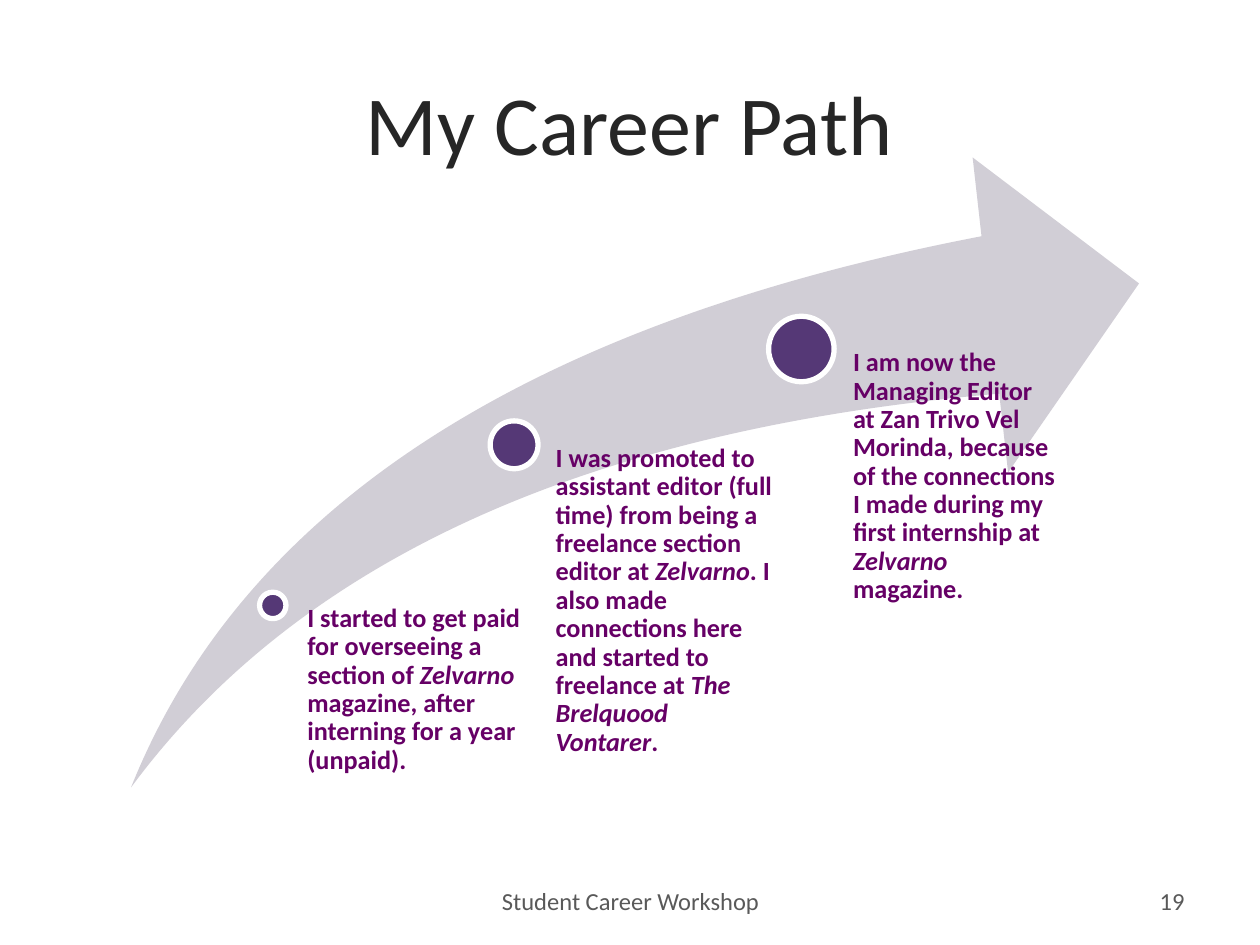
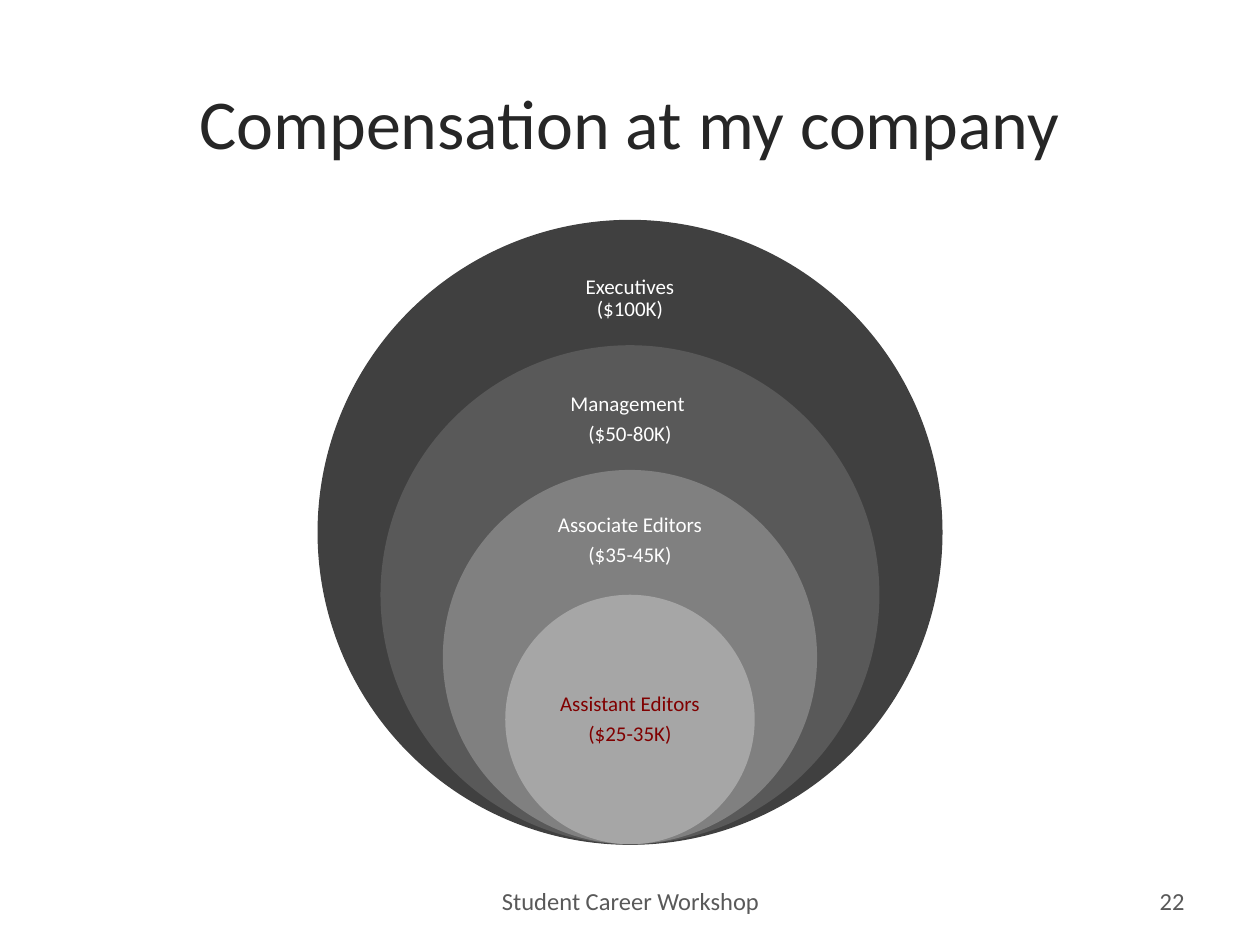
import pptx
import pptx.util
import pptx.dml.color
import pptx.enum.shapes
import pptx.enum.text

Shape = pptx.enum.shapes.MSO_SHAPE
Align = pptx.enum.text.PP_ALIGN
Anchor = pptx.enum.text.MSO_ANCHOR

PX = 9144
FONT = "Calibri"
COLORS = {
    "paper": "FFFFFF", "title": "262626", "foot": "595959",
    "swoosh": "D1CED6", "dot": "553876", "story": "660066",
    "low": "800000", "ring1": "404040", "ring2": "595959",
    "ring3": "808080", "ring4": "A6A6A6",
}
FOOTER = "Student Career Workshop"

PATH = {"title": "My Career Path", "size": 48, "page": "19"}
STEPS = [
    {"dot": (206, 470, 21), "box": (233, 480, 186), "inset": 11,
     "text": "I started to get paid for overseeing a section of *Zelvarno* "
             "magazine, after interning for a year (unpaid)."},
    {"dot": (389, 334, 38), "box": (421, 353, 192), "inset": 20,
     "text": "I was promoted to assistant editor (full time) from being a "
             "freelance section editor at *Zelvarno*. I also made connections "
             "here and started to freelance at* The Brelquood Vontarer*."},
    {"dot": (610, 251, 52), "box": (649, 277, 192), "inset": 28,
     "text": "I am now the Managing Editor at Zan Trivo Vel Morinda, because of "
             "the connections I made during my first internship at *Zelvarno* "
             "magazine."},
]
STEP_END = 625

PAY = {"title": "Compensation at my company", "size": 40, "page": "22"}
RINGS = [
    (["Executives ($100K)"], "ring1", "paper", 209, 56),
    (["Management ", "($50-80K)"], "ring2", "paper", 307, 53),
    (["Associate Editors", "($35-45K)"], "ring3", "paper", 405, 48),
    (["Assistant Editors", "($25-35K)"], "ring4", "low", 531, 80),
]
RING_UNIT, RING_END, MID, LABEL = 99, 670, 500, 120


def px(*nums):
    return [pptx.util.Emu(round(n * PX)) for n in nums]


def rgb(name):
    return pptx.dml.color.RGBColor.from_string(COLORS[name])


def write(slide, lines, box, size, color, align=Align.LEFT, anchor=Anchor.TOP,
          inset=(10, 5, 10, 5), bold=False, space=None, after=0):
    frame = slide.shapes.add_textbox(*px(*box)).text_frame
    frame.word_wrap = True
    frame.vertical_anchor = anchor
    (frame.margin_left, frame.margin_top,
     frame.margin_right, frame.margin_bottom) = px(*inset)
    for i, line in enumerate(lines):
        para = frame.add_paragraph() if i else frame.paragraphs[0]
        para.alignment = align
        para.line_spacing = space
        para.space_after = pptx.util.Pt(after)
        for j, part in enumerate(line.split("*")):
            run = para.add_run()
            run.text = part
            font = run.font
            font.name, font.size = FONT, pptx.util.Pt(size)
            font.bold, font.italic = bold, j % 2 == 1
            font.color.rgb = rgb(color)


def draw(slide, kind, box, fill, line=None, width=0.75):
    shape = slide.shapes.add_shape(kind, *px(*box))
    shape.shadow.inherit = False
    shape.fill.solid()
    shape.fill.fore_color.rgb = rgb(fill)
    if line:
        shape.line.color.rgb = rgb(line)
        shape.line.width = pptx.util.Pt(width)
    else:
        shape.line.fill.background()
    return shape


def start(deck, info):
    slide = deck.slides.add_slide(deck.slide_layouts[6])
    slide.background.fill.solid()
    slide.background.fill.fore_color.rgb = rgb("paper")
    mid = {"anchor": Anchor.MIDDLE}
    write(slide, [info["title"]], (79, 34, 841, 125), info["size"], "title",
          align=Align.CENTER, **mid)
    write(slide, [FOOTER], (342, 695, 317, 40), 14, "foot",
          align=Align.CENTER, **mid)
    write(slide, [info["page"]], (717, 695, 233, 40), 14, "foot",
          align=Align.RIGHT, **mid)
    return slide


def career(deck):
    slide = start(deck, PATH)
    arrow = draw(slide, Shape.SWOOSH_ARROW, (104, 125, 800, 500), "swoosh")
    arrow.adjustments[0] = arrow.adjustments[1] = 0.25
    for step in STEPS:
        left, top, size = step["dot"]
        draw(slide, Shape.OVAL, (left, top, size, size), "dot", "paper", 3)
        left, top, wide = step["box"]
        write(slide, [step["text"]], (left, top, wide, STEP_END - top), 15,
              "story", inset=(step["inset"], 0, 0, 0), bold=True, space=0.9)


def salary(deck):
    slide = start(deck, PAY)
    for i, (lines, fill, ink, top, high) in enumerate(RINGS):
        size = RING_UNIT * (5 - i)
        draw(slide, Shape.OVAL, (MID - size / 2, RING_END - size, size, size),
             fill, fill if i == 0 else None)
        write(slide, lines, (MID - LABEL / 2, top, LABEL, high), 12, ink,
              align=Align.CENTER, anchor=Anchor.MIDDLE, inset=(0, 0, 0, 0),
              space=0.9, after=4.2)


def main():
    deck = pptx.Presentation()
    deck.slide_width, deck.slide_height = px(1000, 750)
    career(deck)
    salary(deck)
    deck.save("out.pptx")


if __name__ == "__main__":
    main()
